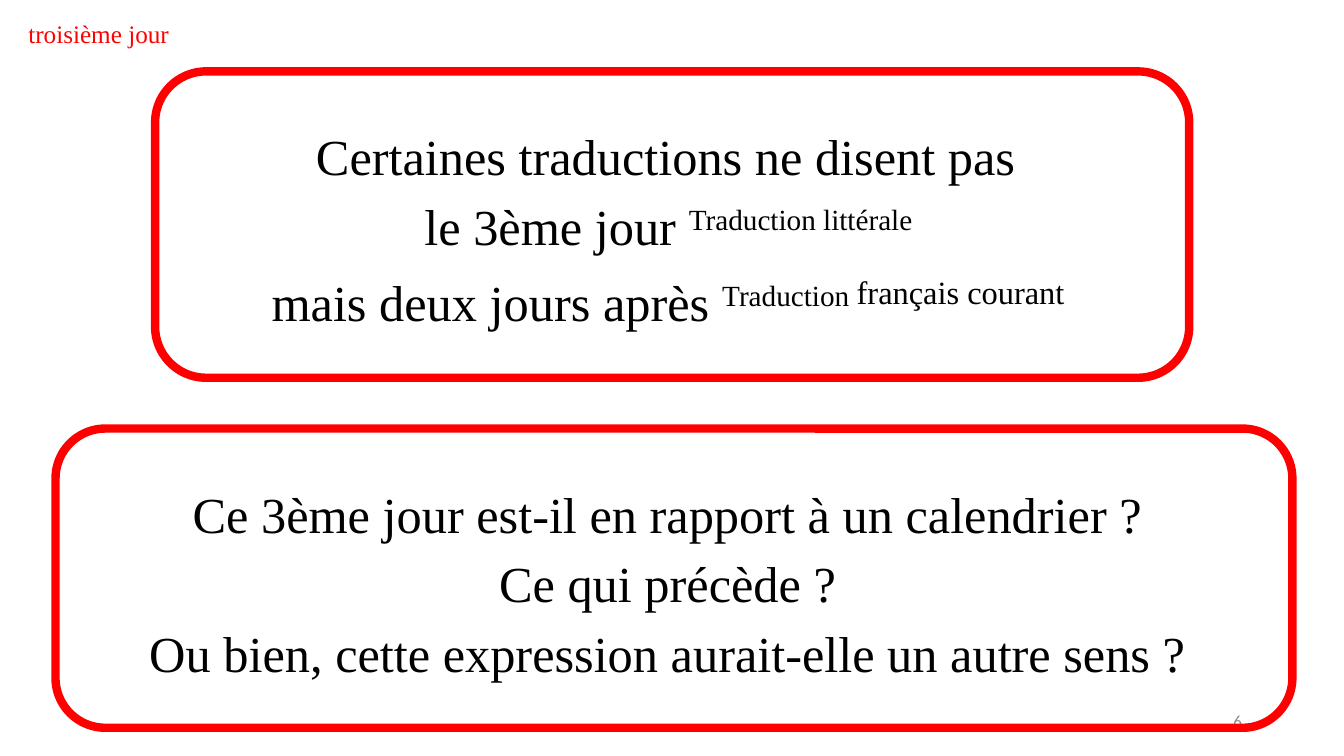
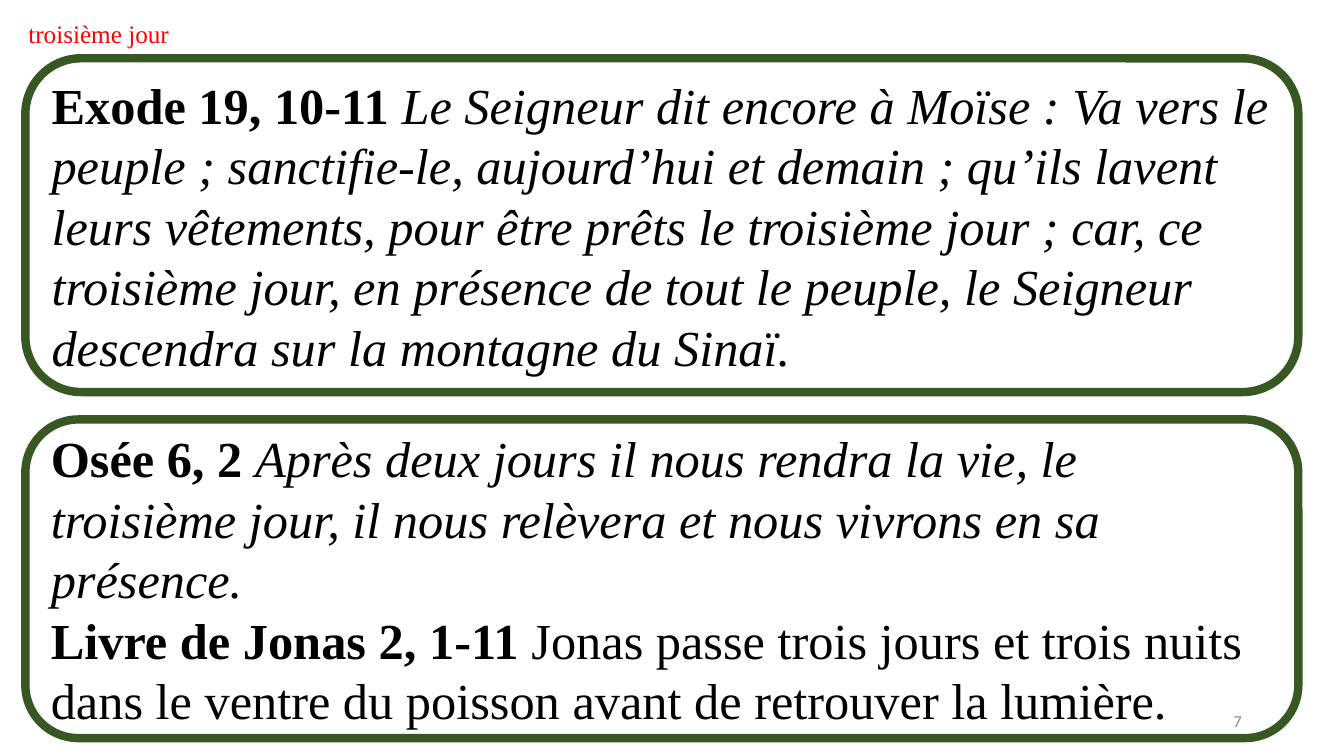
from pptx import Presentation
from pptx import util as u
from pptx.dml import color
from pptx.enum import shapes, text

COLOURS = {"accent": "FF0000", "scripture": "385723", "body": "000000", "number": "8C8C8C"}
SERIF, SANS = "Times New Roman", "Calibri"
TITLE_BOX = (0.46, 0.33, 4.14, 1.02)
NUMBER_BOX = (23.93, 17.65, 7.62, 1.02)
BREAK = "\n"


def rgb(name):
    return color.RGBColor.from_string(COLOURS[name])


def place(part, box):
    part.left, part.top, part.width, part.height = map(u.Cm, box)


def add_run(paragraph, words, size, colour="body", font=SERIF, bold=False, italic=False, raised=False):
    run = paragraph.add_run()
    run.text = words
    run.font.name = font
    run.font.size = u.Pt(size)
    run.font.bold = bold
    run.font.italic = italic
    run.font.color.rgb = rgb(colour)
    if raised:
        run.font._element.set("baseline", "30000")


def add_heading(slide, box):
    heading = slide.shapes.title
    place(heading, box)
    frame = heading.text_frame
    frame.auto_size = text.MSO_AUTO_SIZE.NONE
    frame.word_wrap = False
    frame.vertical_anchor = text.MSO_ANCHOR.TOP
    frame.paragraphs[0].alignment = text.PP_ALIGN.LEFT
    add_run(frame.paragraphs[0], "troisième jour", 18, "accent")


def add_page_number(slide, box, number):
    frame = slide.shapes.add_textbox(*map(u.Cm, box)).text_frame
    frame.word_wrap = True
    frame.vertical_anchor = text.MSO_ANCHOR.MIDDLE
    frame.paragraphs[0].alignment = text.PP_ALIGN.RIGHT
    add_run(frame.paragraphs[0], str(number), 12, "number", SANS)


def add_panel(slide, box, outline, passages, centred):
    panel = slide.shapes.add_shape(shapes.MSO_SHAPE.ROUNDED_RECTANGLE, *map(u.Cm, box))
    panel.shadow.inherit = False
    panel.fill.background()
    panel.line.color.rgb = rgb(outline)
    panel.line.width = u.Pt(6)
    frame = panel.text_frame
    frame.word_wrap = True
    frame.vertical_anchor = text.MSO_ANCHOR.MIDDLE
    for index, passage in enumerate(passages):
        paragraph = frame.add_paragraph() if index else frame.paragraphs[0]
        paragraph.alignment = text.PP_ALIGN.CENTER if centred else text.PP_ALIGN.LEFT
        if centred:
            paragraph.line_spacing = 1.15
            paragraph.space_after = u.Pt(10)
        for words, style in passage:
            if words == BREAK:
                paragraph.add_line_break()
            else:
                add_run(paragraph, words, **{"size": 36, **style})


def add_panel_slide(deck, number, outline, panels, centred=False):
    slide = deck.slides.add_slide(deck.slide_layouts[5])
    add_heading(slide, TITLE_BOX)
    add_page_number(slide, NUMBER_BOX, number)
    for box, passages in panels:
        add_panel(slide, box, outline, passages, centred)


def main():
    deck = Presentation()
    deck.slide_width, deck.slide_height = u.Cm(33.87), u.Cm(19.05)
    reference, quotation, raised = {"bold": True}, {"italic": True}, {"raised": True}

    translations = [[
        ("Certaines traductions ne disent pas ", {}), (BREAK, {}),
        ("le 3ème jour ", {}), ("Traduction littérale ", raised), (BREAK, {}),
        ("mais deux jours après ", {}), ("Traduction ", raised),
        ("français courant ", {"raised": True, "size": 40}),
    ]]
    questions = [[
        ("Ce 3ème jour est-il en rapport à un calendrier ? ", {}), (BREAK, {}),
        ("Ce qui précède ? ", {}), (BREAK, {}),
        ("Ou bien, cette expression aurait-elle un autre sens ? ", {}),
    ]]
    add_panel_slide(deck, 6, "accent", [
        ((3.91, 1.8, 26.06, 7.72), translations),
        ((1.4, 10.8, 31.17, 7.54), questions),
    ], centred=True)

    exodus = [[
        ("Exode 19, 10-11 ", reference),
        ("Le Seigneur dit encore à Moïse : Va vers le peuple ; sanctifie-le, aujourd’hui et demain ; "
         "qu’ils lavent leurs vêtements, pour être prêts le troisième jour ; car, ce troisième jour, "
         "en présence de tout le peuple, le Seigneur descendra sur la montagne du Sinaï.", quotation),
    ]]
    prophets = [
        [("Osée 6, 2 ", reference),
         ("Après deux jours il nous rendra la vie, le troisième jour, il nous relèvera "
          "et nous vivrons en sa présence.", quotation)],
        [("Livre de Jonas 2, 1-11", reference),
         (" Jonas passe trois jours et trois nuits dans le ventre du poisson "
          "avant de retrouver la lumière.", {})],
    ]
    add_panel_slide(deck, 7, "scripture", [
        ((0.64, 1.47, 32.08, 8.41), exodus),
        ((0.64, 10.57, 32.08, 8.03), prophets),
    ])
    deck.save("out.pptx")


if __name__ == "__main__":
    main()
